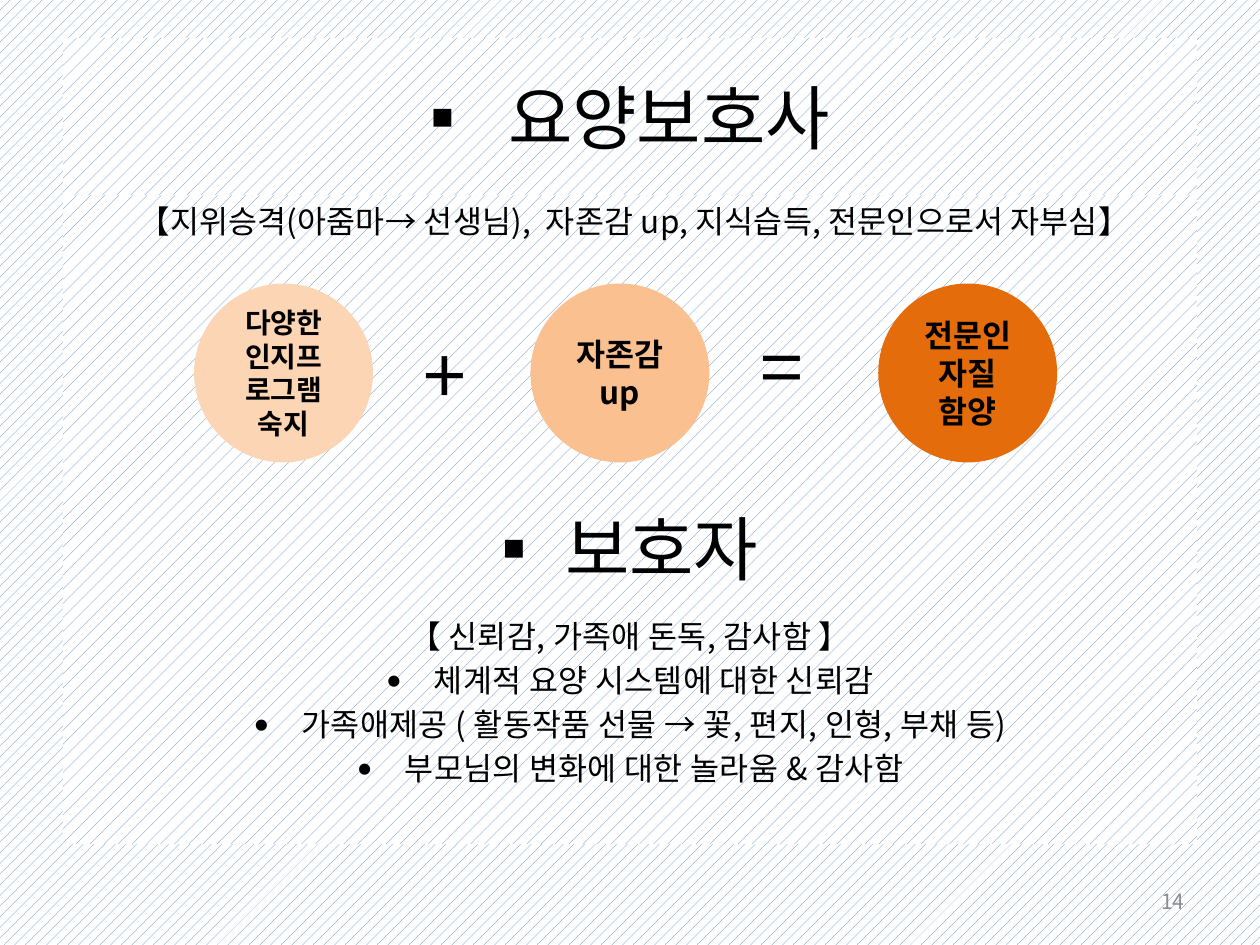
from dataclasses import dataclass

from lxml import etree
from pptx import Presentation
from pptx import util as u
from pptx.dml.color import RGBColor
from pptx.enum import dml, shapes, text
from pptx.oxml import ns


@dataclass(frozen=True)
class Theme:
    font: str = "Noto Sans CJK KR"
    bullet_font: str = "+mj-lt"
    ink: str = "000000"
    muted: str = "8C8C8C"
    pattern_ink: str = "4F81BD"
    paper: str = "FFFFFF"
    heading: int = 40
    body: int = 18
    small: int = 16
    symbol: int = 44
    number: int = 12


THEME = Theme()


@dataclass(frozen=True)
class Line:
    words: str
    size: int
    align: text.PP_ALIGN = text.PP_ALIGN.CENTER
    bold: bool = False
    color: str = THEME.ink
    bullet: str = ""
    margin: float = 0
    hanging: float = 0
    before: float = 0
    after: float = 0
    tracking: float = 0


@dataclass(frozen=True)
class Circle:
    left: float
    color: str
    size: int
    words: tuple[str, ...]


@dataclass(frozen=True)
class Symbol:
    left: float
    top: float
    words: str


CIRCLE_TOP, CIRCLE_SIZE = 2.25, 1.42
ITEM_GAP, ITEM_TRACKING = 3.6, 0.2

CIRCLES = (
    Circle(1.54, "FCD5B5", THEME.small, ("다양한 인지프로그램 숙지",)),
    Circle(4.21, "FAC090", THEME.body, ("자존감up",)),
    Circle(6.97, "E46C0A", THEME.body, ("전문인 자질", "함양")),
)
SYMBOLS = (Symbol(3.26, 2.55, "+"), Symbol(5.94, 2.49, "="))
GUARDIAN_ITEMS = (
    "체계적 요양 시스템에 대한 신뢰감",
    "가족애제공 ( 활동작품 선물 → 꽃, 편지, 인형, 부채 등)",
    "부모님의 변화에 대한 놀라움 & 감사함",
)
TITLE = Line("요양보호사", THEME.heading, bullet="▪", margin=0.62, hanging=0.62)
BODY = [
    Line("【지위승격(아줌마→ 선생님),  자존감 up, 지식습득, 전문인으로서 자부심】",
         THEME.body, text.PP_ALIGN.LEFT, margin=0.5, tracking=0.1),
    Line(" 보호자", THEME.heading, bullet="▪", margin=0.38, hanging=0.38,
         before=152, after=12),
    Line("【 신뢰감, 가족애 돈독, 감사함 】", THEME.body, before=ITEM_GAP,
         tracking=ITEM_TRACKING),
] + [
    Line(item, THEME.body, bullet="•", margin=0.38, hanging=0.38, before=ITEM_GAP,
         tracking=ITEM_TRACKING)
    for item in GUARDIAN_ITEMS
]


def set_pattern(fill, pattern: dml.MSO_PATTERN) -> None:
    fill.patterned()
    fill.pattern = pattern
    fill.fore_color.rgb = RGBColor.from_string(THEME.pattern_ink)
    fill.back_color.rgb = RGBColor.from_string(THEME.paper)


def write_line(paragraph, line: Line) -> None:
    paragraph.alignment = line.align
    paragraph.space_before = u.Pt(line.before)
    paragraph.space_after = u.Pt(line.after)
    properties = paragraph._p.get_or_add_pPr()
    properties.set("marL", str(u.Inches(line.margin)))
    properties.set("indent", str(u.Inches(-line.hanging)))
    if line.bullet:
        etree.SubElement(properties, ns.qn("a:buFont"), typeface=THEME.bullet_font)
        etree.SubElement(properties, ns.qn("a:buChar"), char=line.bullet)
    run = paragraph.add_run()
    run.text = line.words
    run.font.size = u.Pt(line.size)
    run.font.bold = line.bold
    run.font.name = THEME.font
    run.font.color.rgb = RGBColor.from_string(line.color)
    run_properties = run._r.get_or_add_rPr()
    etree.SubElement(run_properties, ns.qn("a:ea"), typeface=THEME.font)
    if line.tracking:
        run_properties.set("spc", str(round(line.tracking * 100)))


def write_lines(shape, lines: list[Line], anchor: text.MSO_ANCHOR,
                wrap: bool = True) -> None:
    frame = shape.text_frame
    frame.word_wrap = wrap
    frame.vertical_anchor = anchor
    for index, line in enumerate(lines):
        paragraph = frame.add_paragraph() if index else frame.paragraphs[0]
        write_line(paragraph, line)


def add_plain_shape(slide, kind: shapes.MSO_SHAPE, left: float, top: float,
                    width: float, height: float):
    shape = slide.shapes.add_shape(
        kind, u.Inches(left), u.Inches(top), u.Inches(width), u.Inches(height))
    shape.shadow.inherit = False
    shape.line.fill.background()
    return shape


def add_panel(slide, top: float, height: float, lines: list[Line],
              anchor: text.MSO_ANCHOR) -> None:
    panel = add_plain_shape(slide, shapes.MSO_SHAPE.RECTANGLE, 0.5, top, 9, height)
    set_pattern(panel.fill, dml.MSO_PATTERN.PERCENT_10)
    write_lines(panel, lines, anchor)


def add_circle(slide, circle: Circle) -> None:
    shape = add_plain_shape(slide, shapes.MSO_SHAPE.OVAL, circle.left, CIRCLE_TOP,
                            CIRCLE_SIZE, CIRCLE_SIZE)
    shape.fill.solid()
    shape.fill.fore_color.rgb = RGBColor.from_string(circle.color)
    lines = [Line(words, circle.size, bold=True) for words in circle.words]
    write_lines(shape, lines, text.MSO_ANCHOR.MIDDLE)


def add_label(slide, left: float, top: float, width: float, height: float,
              line: Line, anchor: text.MSO_ANCHOR, wrap: bool) -> None:
    box = slide.shapes.add_textbox(
        u.Inches(left), u.Inches(top), u.Inches(width), u.Inches(height))
    write_lines(box, [line], anchor, wrap)


def main() -> None:
    presentation = Presentation()
    presentation.slide_width = u.Inches(10)
    presentation.slide_height = u.Inches(7.5)
    slide = presentation.slides.add_slide(presentation.slide_layouts[6])
    set_pattern(slide.background.fill, dml.MSO_PATTERN.PERCENT_20)

    add_panel(slide, 0.3, 1.25, [TITLE], text.MSO_ANCHOR.MIDDLE)
    add_panel(slide, 1.55, 5.15, BODY, text.MSO_ANCHOR.TOP)
    for circle in CIRCLES:
        add_circle(slide, circle)
    for symbol in SYMBOLS:
        add_label(slide, symbol.left, symbol.top, 0.63, 0.84,
                  Line(symbol.words, THEME.symbol, text.PP_ALIGN.LEFT),
                  text.MSO_ANCHOR.TOP, wrap=False)
    add_label(slide, 7.17, 6.95, 2.33, 0.4,
              Line("14", THEME.number, text.PP_ALIGN.RIGHT, color=THEME.muted),
              text.MSO_ANCHOR.MIDDLE, wrap=True)
    presentation.save("out.pptx")


if __name__ == "__main__":
    main()
